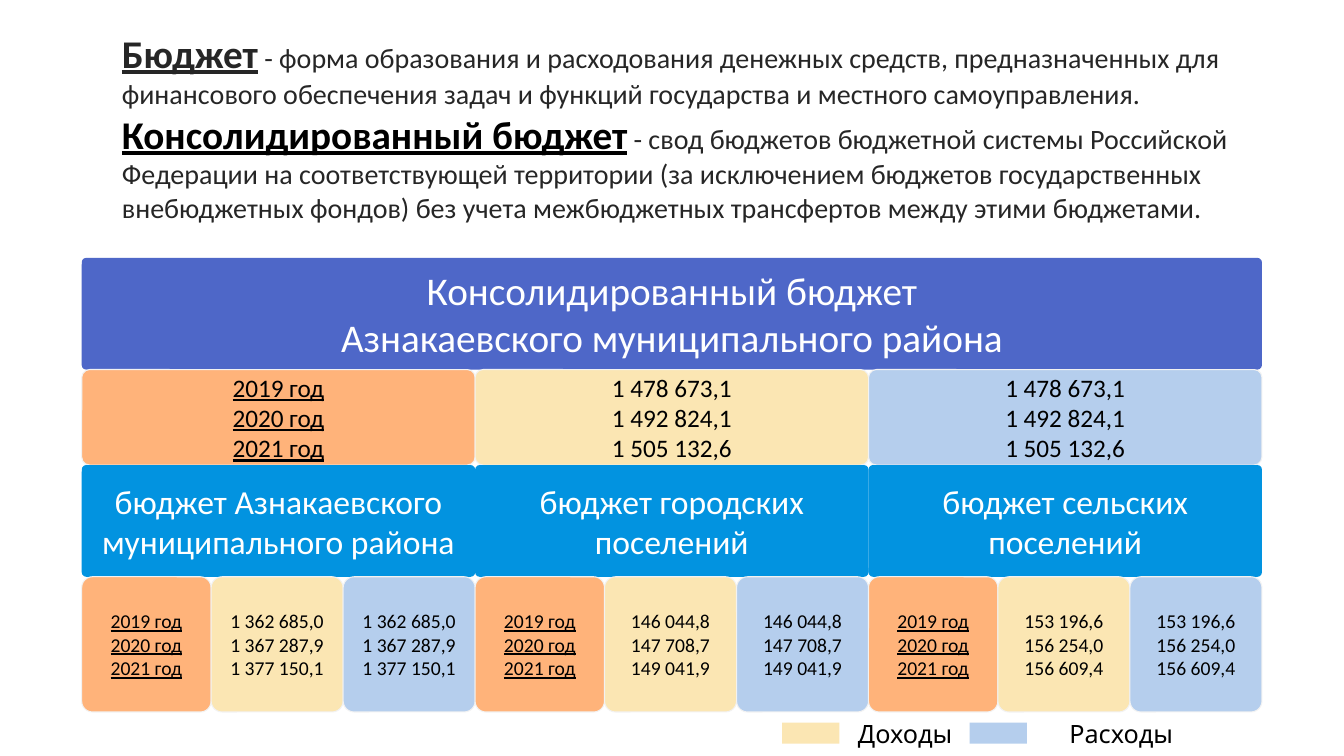
from dataclasses import dataclass

from pptx import Presentation
from pptx.dml.color import RGBColor
from pptx.enum.shapes import MSO_SHAPE
from pptx.enum.text import MSO_ANCHOR, PP_ALIGN
from pptx.util import Pt

RECT, ROUNDED = MSO_SHAPE.RECTANGLE, MSO_SHAPE.ROUNDED_RECTANGLE
MIDDLE, CENTER = MSO_ANCHOR.MIDDLE, PP_ALIGN.CENTER

BLACK = RGBColor(0x00, 0x00, 0x00)
WHITE = RGBColor(0xFF, 0xFF, 0xFF)
DARK = RGBColor(0x26, 0x26, 0x26)
BORDER = RGBColor(0xF2, 0xF2, 0xF2)
INDIGO = RGBColor(0x4E, 0x67, 0xC8)
BLUE = RGBColor(0x02, 0x93, 0xE0)
YEAR_COLOR = RGBColor(0xFF, 0xB3, 0x7A)
INCOME_COLOR = RGBColor(0xFB, 0xE6, 0xB3)
EXPENSE_COLOR = RGBColor(0xB5, 0xCE, 0xED)

LEFT, COLUMN_W = 58.4, 281
HEADER_H, TOTALS_H, DETAILS_H = 79.8, 68.2, 96.6
HEADER_TOP = 184.2
TOTALS_TOP = HEADER_TOP + HEADER_H
BUDGETS_TOP = TOTALS_TOP + TOTALS_H
DETAILS_TOP = BUDGETS_TOP + HEADER_H
LEGEND_TOP, LEGEND_H = 516.2, 15

YEARS = ["2019 год", "2020 год", "2021 год"]
TOTALS = ["1 478 673,1", "1 492 824,1", "1 505 132,6"]


@dataclass
class Budget:
    name: str
    amounts: list[str]


@dataclass
class LegendItem:
    label: str
    color: RGBColor
    left: float
    label_w: float


@dataclass
class Definition:
    term: str
    color: RGBColor
    meaning: str


BUDGETS = [
    Budget("бюджет Азнакаевского муниципального района",
           ["1 362 685,0", "1 367 287,9", "1 377 150,1"]),
    Budget("бюджет городских поселений",
           ["146 044,8", "147 708,7", "149 041,9"]),
    Budget("бюджет сельских поселений",
           ["153 196,6", "156 254,0", "156 609,4"]),
]
LEGEND = [
    LegendItem("Доходы", INCOME_COLOR, 558.7, 82),
    LegendItem("Расходы", EXPENSE_COLOR, 692.6, 123),
]
DEFINITIONS = [
    Definition("Бюджет", DARK,
               " - форма образования и расходования денежных средств, "
               "предназначенных для финансового обеспечения задач и функций "
               "государства и местного самоуправления."),
    Definition("Консолидированный бюджет", BLACK,
               " - свод бюджетов бюджетной системы Российской Федерации на "
               "соответствующей территории (за исключением бюджетов "
               "государственных внебюджетных фондов) без учета межбюджетных "
               "трансфертов между этими бюджетами."),
]


def add_run(p, text: str, *, size: float, color: RGBColor = BLACK,
            font: str = "Calibri", bold: bool = False,
            underline: bool = False) -> None:
    r = p.add_run()
    r.text = text
    r.font.name, r.font.size = font, Pt(size)
    r.font.bold, r.font.underline = bold, underline
    r.font.color.rgb = color


def add_block(s, left: float, top: float, width: float, height: float,
              fill: RGBColor, lines: list[str], *, shape=ROUNDED,
              corner: float = 0.04, border: RGBColor | None = None,
              **text_format) -> None:
    """Add a filled block with one centred paragraph per line."""
    sp = s.shapes.add_shape(shape, Pt(left), Pt(top), Pt(width), Pt(height))
    sp.shadow.inherit = False
    sp.fill.solid()
    sp.fill.fore_color.rgb = fill
    if shape == ROUNDED:
        sp.adjustments[0] = corner
    if border is None:
        sp.line.fill.background()
    else:
        sp.line.color.rgb = border
        sp.line.width = Pt(0.75)
    tf = sp.text_frame
    tf.word_wrap = True
    tf.vertical_anchor = MIDDLE
    tf.margin_left = tf.margin_right = tf.margin_top = tf.margin_bottom = 0
    for i, line in enumerate(lines):
        p = tf.add_paragraph() if i else tf.paragraphs[0]
        p.alignment = CENTER
        add_run(p, line, **text_format)


def add_figures(s, left: float, top: float, height: float, year_w: float,
                amount_w: float, amounts: list[str], size: float) -> None:
    """Add the years with their equal income and expense amounts."""
    cells = [(left, year_w, YEAR_COLOR, YEARS),
             (left + year_w, amount_w, INCOME_COLOR, amounts),
             (left + year_w + amount_w, amount_w, EXPENSE_COLOR, amounts)]
    for x, width, fill, lines in cells:
        add_block(s, x, top, width, height, fill, lines, corner=0.083,
                  border=BORDER, size=size, underline=lines is YEARS)


def add_definitions(s) -> None:
    tb = s.shapes.add_textbox(Pt(80), Pt(17.3), Pt(806.4), Pt(152.6))
    tf = tb.text_frame
    tf.word_wrap = True
    for i, item in enumerate(DEFINITIONS):
        p = tf.add_paragraph() if i else tf.paragraphs[0]
        add_run(p, item.term, size=28, color=item.color, bold=True,
                underline=True)
        add_run(p, item.meaning, size=20, color=DARK)


def main() -> None:
    prs = Presentation()
    prs.slide_width, prs.slide_height = Pt(960), Pt(540)
    s = prs.slides.add_slide(prs.slide_layouts[6])

    add_definitions(s)
    add_block(s, LEFT, HEADER_TOP, 3 * COLUMN_W, HEADER_H, INDIGO,
              ["Консолидированный бюджет",
               "Азнакаевского муниципального района"],
              size=28, color=WHITE)
    add_figures(s, LEFT, TOTALS_TOP, TOTALS_H, COLUMN_W, COLUMN_W, TOTALS, 18)

    for i, budget in enumerate(BUDGETS):
        x = LEFT + i * COLUMN_W
        add_block(s, x, BUDGETS_TOP, COLUMN_W, HEADER_H, BLUE, [budget.name],
                  size=24, color=WHITE)
        add_figures(s, x, DETAILS_TOP, DETAILS_H, 92.4, 94.3,
                    budget.amounts, 14)

    for item in LEGEND:
        add_block(s, item.left, LEGEND_TOP, 41, LEGEND_H, item.color, [],
                  shape=RECT)
        add_block(s, item.left + 46.8, LEGEND_TOP, item.label_w, LEGEND_H,
                  WHITE, [item.label], shape=RECT, border=WHITE, size=18,
                  font="Cabin")

    prs.save("out.pptx")


if __name__ == "__main__":
    main()
